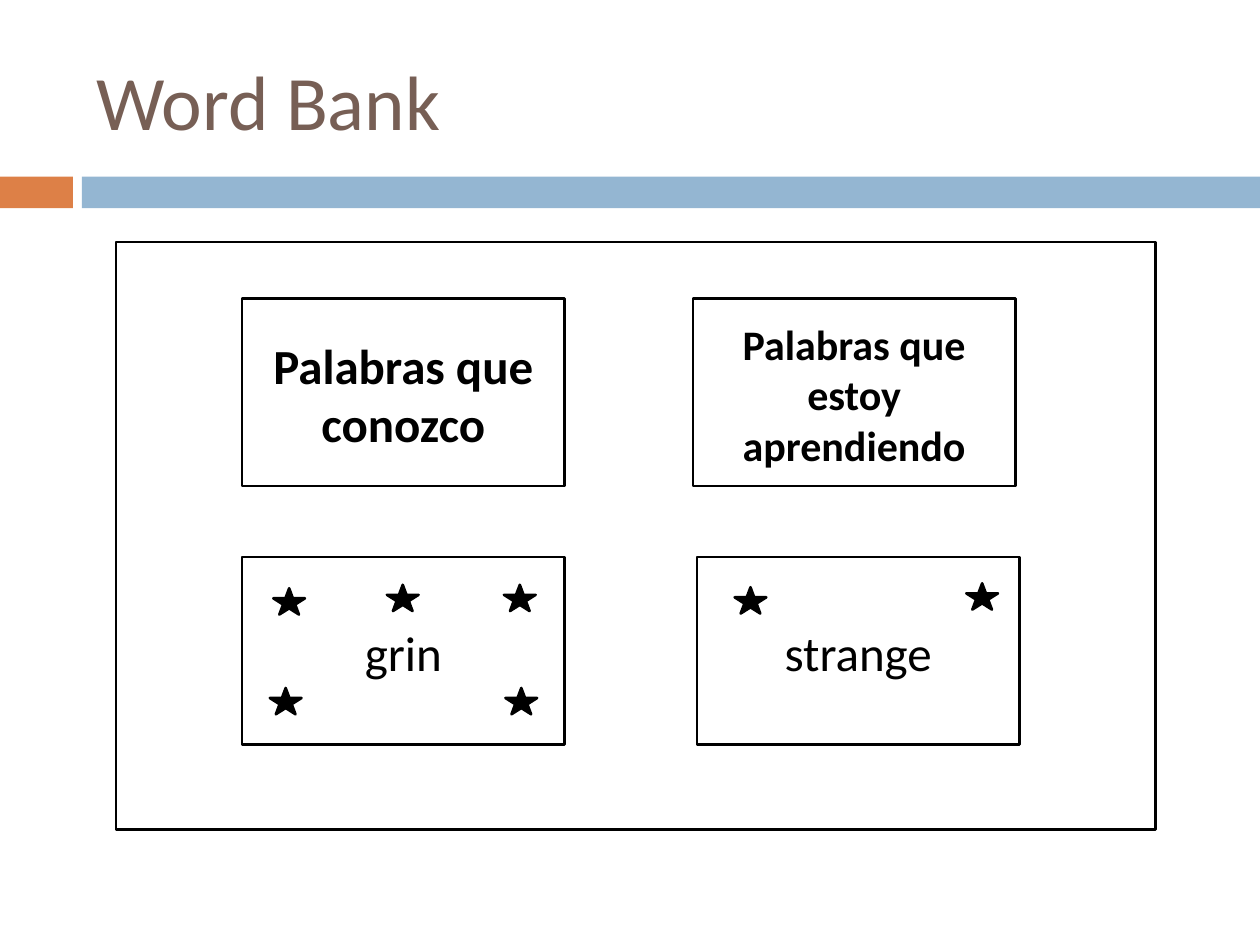
from pptx import Presentation
from pptx.dml.color import RGBColor
from pptx.enum import shapes, text
from pptx.util import Cm, Pt

COLORS = {"orange": "DD8047", "blue": "94B6D2", "brown": "775F55", "black": "000000"}
FONT = "Calibri"
TITLE = "Word Bank"

# Lengths in centimetres: left, top, width, height
TITLE_AREA = (1.7, 0.64, 22.66, 2.74)
BANDS = [("orange", (0, 3.56, 1.47, 0.64)), ("blue", (1.65, 3.56, 23.75, 0.64))]
FRAME = (2.34, 4.88, 20.96, 11.84)
CARD_SIZE = (6.5, 3.78)
STAR_SIZE = (0.64, 0.53)

# One entry per card; stars are offsets from the card's corner
CARDS = [
    {"words": "Palabras que conozco", "at": (4.88, 6.02), "size": 28, "bold": True,
     "text_height": 2.64, "stars": []},
    {"words": "Palabras que estoy aprendiendo", "at": (13.97, 6.02), "size": 24, "bold": True,
     "text_height": 3.33, "stars": []},
    {"words": "grin", "at": (4.88, 11.23), "size": 28, "bold": False, "text_height": 1.45,
     "stars": [(0.63, 0.63), (2.92, 0.56), (5.28, 0.56), (5.31, 2.64), (0.56, 2.64)]},
    {"words": "strange", "at": (14.05, 11.23), "size": 28, "bold": False, "text_height": 1.45,
     "stars": [(0.76, 0.61), (5.43, 0.53)]},
]

RECTANGLE = shapes.MSO_SHAPE.RECTANGLE
STAR = shapes.MSO_SHAPE.STAR_5_POINT


def add_figure(page, kind, area, fill=None, line=None):
    figure = page.shapes.add_shape(kind, *map(Cm, area))
    figure.shadow.inherit = False
    if fill:
        figure.fill.solid()
        figure.fill.fore_color.rgb = RGBColor.from_string(COLORS[fill])
    else:
        figure.fill.background()
    if line:
        figure.line.color.rgb = RGBColor.from_string(COLORS[line])
        figure.line.width = Pt(1.5)
    else:
        figure.line.fill.background()


def add_words(page, words, area, size, color, align, bold=False):
    box = page.shapes.add_textbox(*map(Cm, area))
    frame = box.text_frame
    frame.word_wrap = True
    frame.vertical_anchor = text.MSO_ANCHOR.MIDDLE
    para = frame.paragraphs[0]
    para.alignment = align
    span = para.add_run()
    span.text = words
    span.font.name = FONT
    span.font.size = Pt(size)
    span.font.bold = bold
    span.font.color.rgb = RGBColor.from_string(COLORS[color])


def main():
    deck = Presentation()
    deck.slide_width, deck.slide_height = Cm(25.4), Cm(19.05)
    page = deck.slides.add_slide(deck.slide_layouts[6])

    # Title and bands
    for color, area in BANDS:
        add_figure(page, RECTANGLE, area, fill=color)
    add_words(page, TITLE, TITLE_AREA, 44, "brown", text.PP_ALIGN.LEFT)

    # Board with its cards
    add_figure(page, RECTANGLE, FRAME, line="black")
    width, height = CARD_SIZE
    for card in CARDS:
        left, top = card["at"]
        add_figure(page, RECTANGLE, (left, top, width, height), line="black")
        text_top = top + (height - card["text_height"]) / 2 + 0.03
        add_words(page, card["words"], (left, text_top, width, card["text_height"]),
                  card["size"], "black", text.PP_ALIGN.CENTER, card["bold"])
        for across, down in card["stars"]:
            add_figure(page, STAR, (left + across, top + down, *STAR_SIZE),
                       fill="black", line="black")

    deck.save("out.pptx")


if __name__ == "__main__":
    main()
